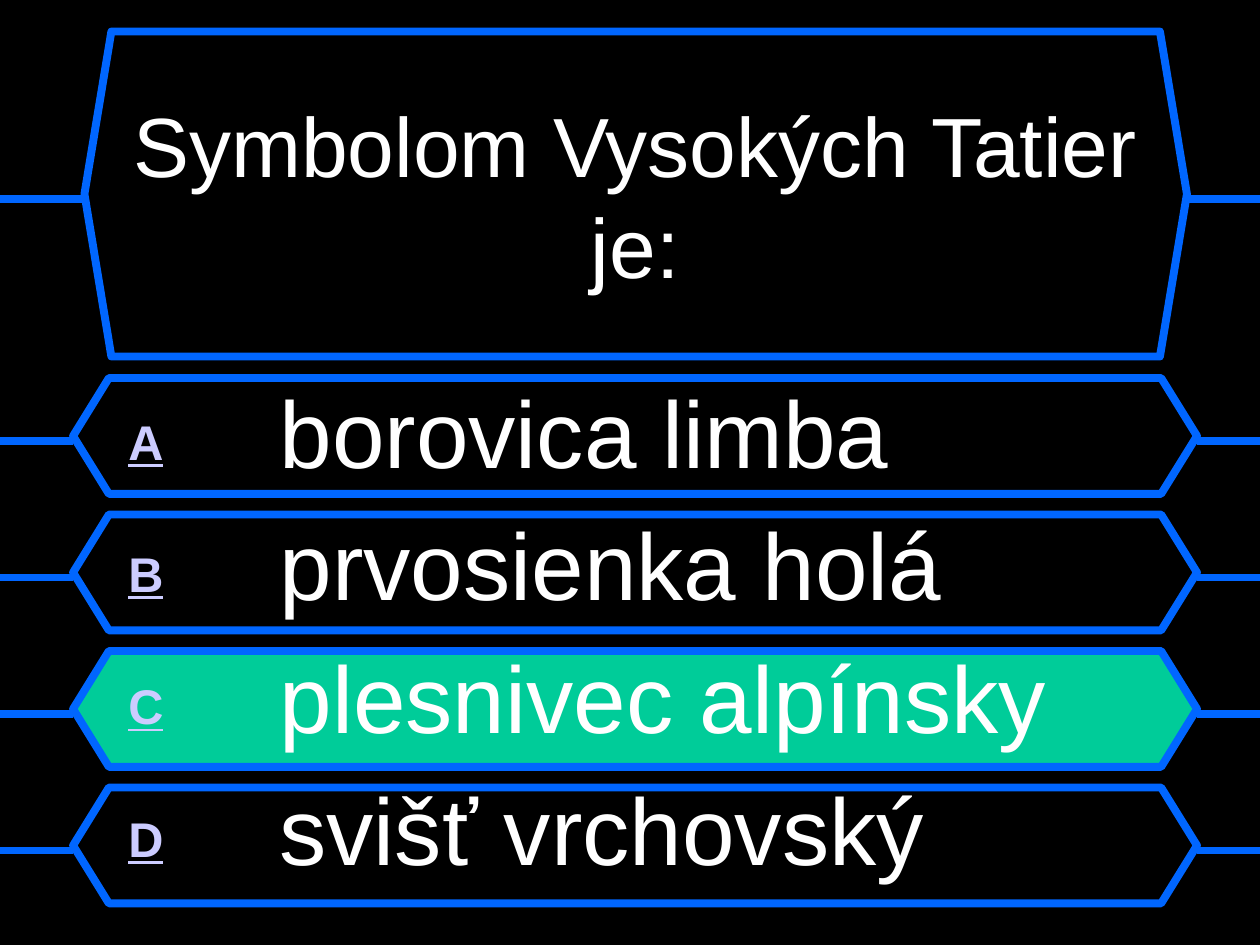
from dataclasses import dataclass

from lxml import etree
from pptx import Presentation, util as u
from pptx.dml.color import RGBColor
from pptx.enum import shapes, text
from pptx.oxml import ns


@dataclass(frozen=True)
class Theme:
    background: RGBColor = RGBColor(0, 0, 0)
    frame: RGBColor = RGBColor(0x00, 0x66, 0xFF)
    correct: RGBColor = RGBColor(0x00, 0xCC, 0x99)
    words: RGBColor = RGBColor(0xFF, 0xFF, 0xFF)
    letter: RGBColor = RGBColor(0xCC, 0xCC, 0xFF)
    font: str = "Arial"
    question_size: float = 48
    letter_size: float = 48
    answer_size: float = 54
    line_width: float = 4.5
    leading: float = 1.2


theme = Theme()
answers = {
    "A": "borovica limba",
    "B": "prvosienka holá",
    "C": "plesnivec alpínsky",
    "D": "svišť vrchovský",
}
correct_letter = "C"
answer_top, answer_pitch = 3, 13 / 12

presentation = Presentation()
presentation.slide_width = u.Inches(10)
presentation.slide_height = u.Inches(7.5)
slide = presentation.slides.add_slide(presentation.slide_layouts[6])
slide.background.fill.solid()
slide.background.fill.fore_color.rgb = theme.background


def add_frame(left, top, width, height, point, fill, line_y):
    """Add a hexagon and the two lines that run from it to the slide edges."""
    shape = slide.shapes.add_shape(
        shapes.MSO_SHAPE.HEXAGON,
        u.Inches(left), u.Inches(top), u.Inches(width), u.Inches(height))
    shape.adjustments[0] = point
    shape.shadow.inherit = False
    shape.fill.solid()
    shape.fill.fore_color.rgb = fill
    shape.line.color.rgb = theme.frame
    shape.line.width = u.Pt(theme.line_width)
    for start, end in ((left, 0), (10, left + width)):
        connector = slide.shapes.add_connector(
            shapes.MSO_CONNECTOR.STRAIGHT,
            u.Inches(start), u.Inches(line_y), u.Inches(end), u.Inches(line_y))
        connector.line.color.rgb = theme.frame
        connector.line.width = u.Pt(theme.line_width)
        etree.SubElement(connector._element.spPr, ns.qn("a:effectLst"))


def add_text_frame(left, top, width, height, anchor):
    box = slide.shapes.add_textbox(
        u.Inches(left), u.Inches(top), u.Inches(width), u.Inches(height))
    box.text_frame.word_wrap = True
    box.text_frame.vertical_anchor = anchor
    return box.text_frame


# Frames
add_frame(0.67, 0.25, 8.75, 2.58, 0.083, theme.background, 1.58)
for row, letter in enumerate(answers):
    top = answer_top + row * answer_pitch
    fill = theme.correct if letter == correct_letter else theme.background
    add_frame(0.58, top, 8.92, 0.92, 0.309, fill, top + 0.5)

# Question
question = add_text_frame(0.83, 0.42, 8.42, 2.25, text.MSO_ANCHOR.MIDDLE)
paragraph = question.paragraphs[0]
paragraph.text = "Symbolom Vysokých Tatier je:"
paragraph.alignment = text.PP_ALIGN.CENTER
paragraph.line_spacing = u.Pt(theme.question_size * theme.leading)
paragraph.font.name = theme.font
paragraph.font.size = u.Pt(theme.question_size)
paragraph.font.color.rgb = theme.words

# Answers: a raised letter, then a tab to the hanging indent
answer_list = add_text_frame(0.92, 2.92, 8.33, 4.33, text.MSO_ANCHOR.TOP)
for row, (letter, answer) in enumerate(answers.items()):
    paragraph = answer_list.add_paragraph() if row else answer_list.paragraphs[0]
    paragraph.line_spacing = u.Pt(theme.answer_size * theme.leading)
    if row:
        paragraph.space_before = u.Pt(theme.answer_size * 0.2)
    properties = paragraph._p.get_or_add_pPr()
    properties.set("marL", str(u.Inches(1.2)))
    properties.set("indent", str(-u.Inches(1.2)))

    letter_run = paragraph.add_run()
    letter_run.text = letter
    letter_run.font.size = u.Pt(theme.letter_size)
    letter_run.font.bold = True
    letter_run.font.underline = True
    letter_run.font.color.rgb = theme.letter
    letter_run.font._element.set("baseline", "10000")

    answer_run = paragraph.add_run()
    answer_run.text = "\t" + answer
    answer_run.font.size = u.Pt(theme.answer_size)
    answer_run.font.color.rgb = theme.words
    for run in paragraph.runs:
        run.font.name = theme.font

presentation.save("out.pptx")
